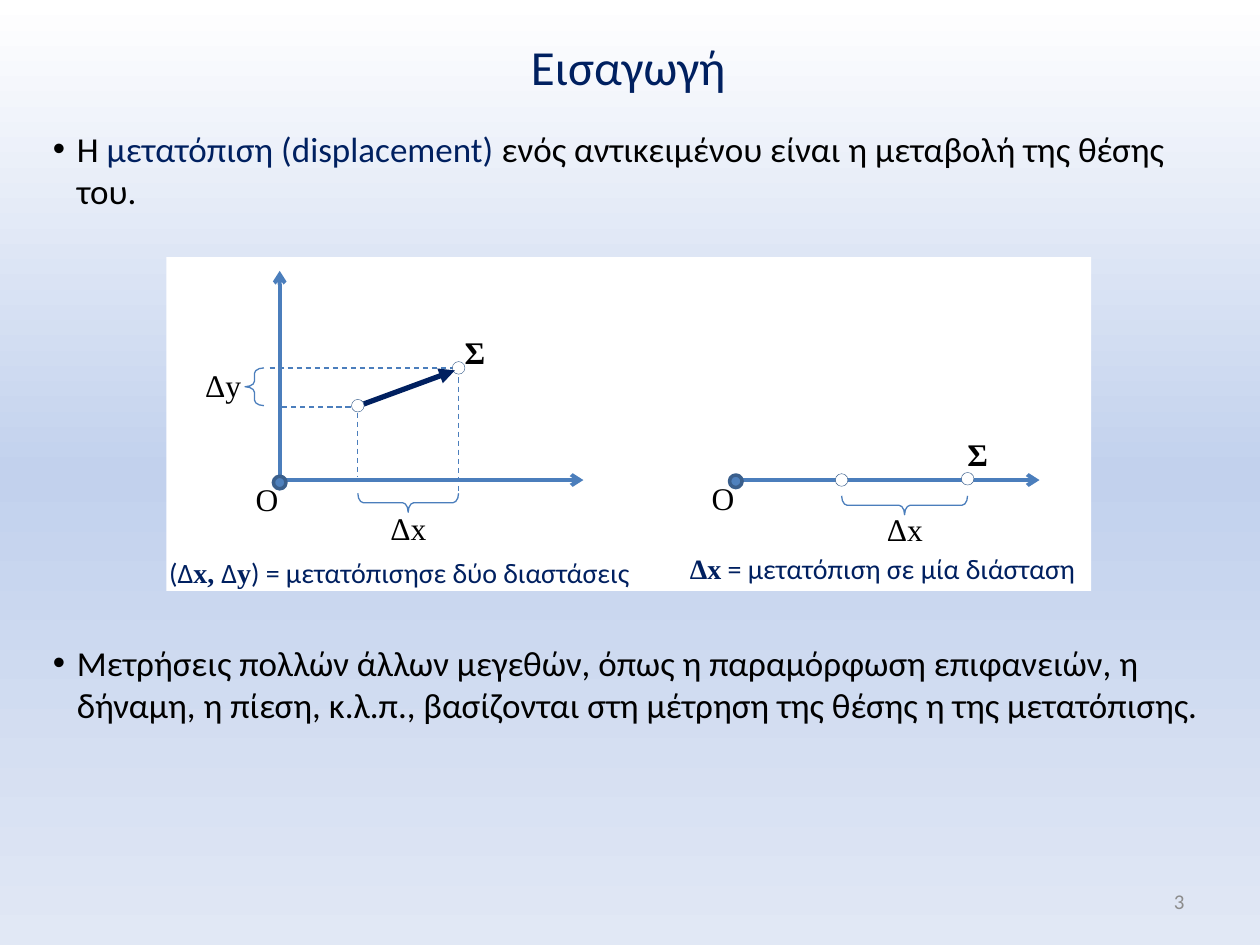
from copy import deepcopy

from pptx import Presentation
from pptx.dml.color import RGBColor
from pptx.enum.dml import MSO_LINE
from pptx.enum.shapes import MSO_CONNECTOR, MSO_SHAPE as SHAPE
from pptx.enum.text import MSO_ANCHOR as ANCHOR, MSO_AUTO_SIZE, PP_ALIGN as ALIGN
from pptx.oxml.ns import qn
from pptx.util import Inches, Pt

SANS, SERIF = "Calibri", "Times New Roman"
NAVY, BLACK, WHITE, GREY = "002060", "000000", "FFFFFF", "8C8C8C"
BLUE, ORIGIN, OUTLINE = "4B7EBC", "4F81BD", "3A5F8C"
DOT = 0.1


def rgb(value):
    return RGBColor.from_string(value)


def box(*lengths):
    return [Inches(v) for v in lengths]


class Diagram:
    """Holds the slide and the shape collection being drawn into."""

    def __init__(self, slide):
        self.slide = slide
        self.shapes = slide.shapes

    def background(self, stops):
        fill = self.slide.background.fill
        fill.gradient()
        fill.gradient_angle = 270
        first = fill.gradient_stops[0]._gs
        first.addnext(deepcopy(first))
        for stop, (position, color) in zip(fill.gradient_stops, stops):
            stop.position = position
            stop.color.rgb = rgb(color)

    def start_group(self):
        self.shapes = self.slide.shapes.add_group_shape().shapes

    def end_group(self):
        self.shapes = self.slide.shapes

    def runs(self, p, parts, size):
        """Each part is (text, font, color, bold)."""
        for text, font, color, bold in parts:
            r = p.add_run()
            r.text = text
            r.font.name, r.font.size, r.font.bold = font, Pt(size), bold
            r.font.color.rgb = rgb(color)

    def placeholder(self, sp, place, anchor):
        sp.left, sp.top, sp.width, sp.height = box(*place)
        tf = sp.text_frame
        tf.auto_size, tf.vertical_anchor = MSO_AUTO_SIZE.NONE, anchor
        return tf

    def title(self, text, place):
        tf = self.placeholder(self.slide.shapes.title, place, ANCHOR.MIDDLE)
        tf.paragraphs[0].alignment = ALIGN.CENTER
        self.runs(tf.paragraphs[0], [(text, SANS, NAVY, False)], 28)

    def bullets(self, items, place):
        """Each item is (space before in points, parts)."""
        tf = self.placeholder(self.slide.placeholders[1], place, ANCHOR.TOP)
        for i, (space, parts) in enumerate(items):
            p = tf.add_paragraph() if i else tf.paragraphs[0]
            p.space_before = Pt(space)
            pPr = p._p.get_or_add_pPr()
            pPr.set("marL", str(Inches(0.19)))
            pPr.set("indent", str(Inches(-0.19)))
            self.runs(p, parts, 20)

    def text(self, parts, place, size, align=ALIGN.LEFT, inset=True, anchor=ANCHOR.TOP):
        tf = self.shapes.add_textbox(*box(*place)).text_frame
        tf.word_wrap, tf.vertical_anchor = False, anchor
        if not inset:
            tf.margin_left = tf.margin_right = tf.margin_top = tf.margin_bottom = 0
        tf.paragraphs[0].alignment = align
        self.runs(tf.paragraphs[0], parts, size)

    def label(self, text, x, y, width, bold=False):
        self.text([(text, SERIF, BLACK, bold)], (x, y, width, 0.4), 18)

    def shape(self, kind, place, fill=None, line=None, width=0.75):
        sp = self.shapes.add_shape(kind, *box(*place))
        self.paint(sp, fill, line, width)
        return sp

    def paint(self, sp, fill, line, width):
        sp.shadow.inherit = False
        if fill:
            sp.fill.solid()
            sp.fill.fore_color.rgb = rgb(fill)
        else:
            sp.fill.background()
        if line:
            sp.line.color.rgb, sp.line.width = rgb(line), Pt(width)
        else:
            sp.line.fill.background()

    def dot(self, x, y, fill=WHITE, width=0.25):
        place = (x - DOT / 2, y - DOT / 2, DOT, DOT)
        self.shape(SHAPE.OVAL, place, fill, OUTLINE, width)

    def brace(self, x, y, length, rotation=0):
        """Centred on x, y; opens right, or up when turned by 270."""
        place = (x - 0.075, y - length / 2, 0.15, length)
        sp = self.shape(SHAPE.RIGHT_BRACE, place, line=BLUE)
        sp.adjustments[0], sp.adjustments[1] = 0.295, 0.5
        sp.rotation = rotation
        sp._element.spPr.find(qn("a:xfrm")).set("flipH", "1")

    def guide(self, x1, y1, x2, y2):
        """Dashed line across, then down."""
        builder = self.shapes.build_freeform(*box(x1, y1))
        builder.add_line_segments([box(x2, y1), box(x2, y2)], close=False)
        sp = builder.convert_to_shape()
        self.paint(sp, None, BLUE, 0.75)
        sp.line.dash_style = MSO_LINE.DASH

    def arrow(self, x1, y1, x2, y2, color=BLUE, width=2.25, head="arrow"):
        cn = self.shapes.add_connector(MSO_CONNECTOR.STRAIGHT, *box(x1, y1, x2, y2))
        cn.line.color.rgb, cn.line.width = rgb(color), Pt(width)
        ln = cn.line._get_or_add_ln()
        ln.append(ln.makeelement(qn("a:tailEnd"), {"type": head}))
        spPr = cn._element.spPr
        spPr.append(spPr.makeelement(qn("a:effectLst"), {}))


def main():
    prs = Presentation()
    prs.slide_width, prs.slide_height = box(10, 7.5)
    d = Diagram(prs.slides.add_slide(prs.slide_layouts[1]))
    d.background([(0, WHITE), (0.5, "C2D1ED"), (1, "E1E8F5")])

    # Title and bullets; the second bullet sits below the diagram
    d.title("Εισαγωγή", (1.34, 0.24, 7.29, 0.57))
    d.bullets([
        (6, [("Η ", SANS, BLACK, False),
             ("μετατόπιση (displacement) ", SANS, NAVY, False),
             ("ενός αντικειμένου είναι η μεταβολή της θέσης του.", SANS, BLACK, False)]),
        (246, [("Μετρήσεις πολλών άλλων μεγεθών, όπως η παραμόρφωση επιφανειών, "
                "η δήναμη, η πίεση, κ.λ.π., βασίζονται στη μέτρηση της θέσης "
                "η της μετατόπισης.", SANS, BLACK, False)]),
    ], (0.32, 0.96, 9.34, 4.9))

    # Diagram panel
    d.start_group()
    d.shape(SHAPE.RECTANGLE, (1.32, 2.04, 7.34, 2.65), WHITE)

    # Two dimensions: axes, guides and displacement vector
    d.arrow(2.23, 3.81, 4.63, 3.81)
    d.arrow(2.22, 3.81, 2.22, 2.15)
    d.dot(2.22, 3.83, ORIGIN, 2)
    d.guide(2.14, 2.92, 3.64, 3.92)
    d.guide(2.24, 3.23, 2.84, 3.78)
    d.dot(3.64, 2.92)
    d.arrow(2.85, 3.22, 3.61, 2.94, NAVY, 3, "triangle")
    d.dot(2.84, 3.22)
    d.brace(2.02, 3.07, 0.3)
    d.brace(3.24, 3.99, 0.8, 270)
    d.label("O", 1.93, 3.76, 0.37)
    d.label("Δx", 3, 3.99, 0.49)
    d.label("Δy", 1.53, 2.86, 0.5)
    d.label("Σ", 3.59, 2.59, 0.34, True)

    # One dimension
    d.arrow(5.85, 3.81, 8.25, 3.81)
    d.dot(5.84, 3.82, ORIGIN, 2)
    d.dot(6.68, 3.81)
    d.dot(7.68, 3.8)
    d.brace(7.18, 4.01, 1, 270)
    d.label("O", 5.55, 3.75, 0.37)
    d.label("Δx", 6.94, 4, 0.49)
    d.label("Σ", 7.58, 3.4, 0.34, True)

    # Captions
    d.text([("(Δ", SANS, NAVY, False), ("x, ", SERIF, NAVY, True),
            ("Δ", SANS, NAVY, False), ("y", SERIF, NAVY, True),
            (") = μετατόπισησε δύο διαστάσεις", SANS, NAVY, False)],
           (1.32, 4.41, 3.7, 0.27), 16, ALIGN.CENTER, inset=False)
    d.text([("Δx", SERIF, NAVY, True),
            (" = μετατόπιση σε μία διάσταση", SANS, NAVY, False)],
           (5.46, 4.38, 3.09, 0.27), 16, ALIGN.CENTER, inset=False)
    d.end_group()

    # Slide number
    d.text([("3", SANS, GREY, False)], (7.17, 6.95, 2.33, 0.4), 12,
           ALIGN.RIGHT, anchor=ANCHOR.MIDDLE)
    d.shapes[-1].text_frame.word_wrap = True

    prs.save("out.pptx")


if __name__ == "__main__":
    main()
